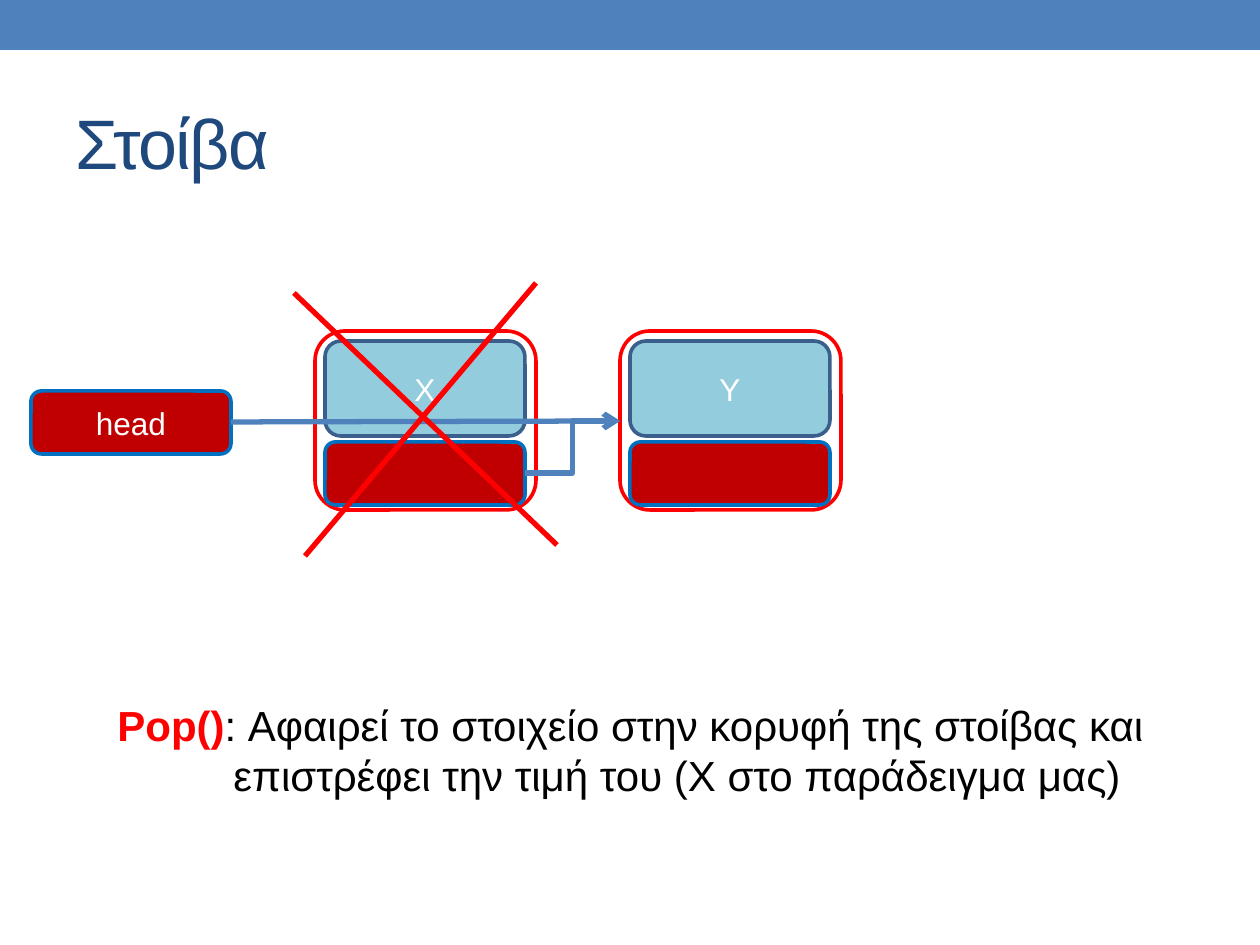
from lxml.etree import SubElement
from pptx import Presentation
from pptx.dml.color import RGBColor
from pptx.enum.shapes import MSO_CONNECTOR, MSO_SHAPE
from pptx.enum.text import MSO_ANCHOR, MSO_AUTO_SIZE, PP_ALIGN
from pptx.oxml.ns import qn
from pptx.util import Pt

EMU_PER_PX = 914400 / 126
FONT = "Arial"
BLUE = RGBColor(0x4F, 0x81, 0xBD)
NAVY = RGBColor(0x1F, 0x49, 0x7D)
RED = RGBColor(0xFF, 0x00, 0x00)
DARK_RED = RGBColor(0xC0, 0x00, 0x00)
BORDER_BLUE = RGBColor(0x00, 0x70, 0xC0)
LIGHT_BLUE = RGBColor(0x93, 0xCD, 0xDD)
SLATE = RGBColor(0x3A, 0x5F, 0x8C)
WHITE = RGBColor(0xFF, 0xFF, 0xFF)
BLACK = RGBColor(0x00, 0x00, 0x00)


def px(*lengths):
    return [round(length * EMU_PER_PX) for length in lengths]


def add_run(paragraph, text, size, color, bold=False):
    run = paragraph.add_run()
    run.text = text
    run.font.name = FONT
    run.font.size = Pt(size)
    run.font.color.rgb = color
    run.font.bold = bold
    return run


def add_box(shapes, box, fill=None, line=None, label="", kind=MSO_SHAPE.ROUNDED_RECTANGLE):
    shape = shapes.add_shape(kind, *px(*box))
    shape.shadow.inherit = False
    if fill is None:
        shape.fill.background()
    else:
        shape.fill.solid()
        shape.fill.fore_color.rgb = fill
    if line is None:
        shape.line.fill.background()
    else:
        shape.line.color.rgb = line
        shape.line.width = Pt(2.08)
    if label:
        shape.text_frame.vertical_anchor = MSO_ANCHOR.MIDDLE
        paragraph = shape.text_frame.paragraphs[0]
        paragraph.alignment = PP_ALIGN.CENTER
        add_run(paragraph, label, 18, WHITE)
    return shape


def add_line(shapes, start, end, color, kind=MSO_CONNECTOR.STRAIGHT, arrow=False):
    connector = shapes.add_connector(kind, *px(*start, *end))
    connector.line.color.rgb = color
    connector.line.width = Pt(3)
    if arrow:
        SubElement(connector.line._get_or_add_ln(), qn("a:tailEnd"), type="arrow")
    SubElement(connector._element.spPr, qn("a:effectLst"))


def add_title(slide, box, text):
    title = slide.shapes.title
    title.left, title.top, title.width, title.height = px(*box)
    title.text_frame.vertical_anchor = MSO_ANCHOR.MIDDLE
    paragraph = title.text_frame.paragraphs[0]
    paragraph.alignment = PP_ALIGN.LEFT
    run = add_run(paragraph, text, 40, NAVY)
    run.font._element.set("spc", "-100")


def add_node(slide, box, value):
    left, top, width, height = box
    shapes = slide.shapes.add_group_shape().shapes
    inner_left, inner_width = left + 10, width - 21
    add_box(shapes, box, line=RED)
    add_box(shapes, (inner_left, top + 111, inner_width, 63), DARK_RED, BORDER_BLUE)
    add_box(shapes, (inner_left, top + 10, inner_width, 95), LIGHT_BLUE, SLATE, value)


def add_cross(slide, box):
    left, top, width, height = box
    right, bottom = left + width, top + height
    add_line(slide.shapes, (right - 21, top), (left + 11, bottom), RED)
    add_line(slide.shapes, (left, top + 10), (right, bottom - 11), RED)


def add_stack(slide, box):
    left, top, width, height = box
    node_top = top + 48
    second_left = left + 589
    target = (second_left, top + 138)
    add_node(slide, (left + 284, node_top, 221, 179), "X")
    add_node(slide, (second_left, node_top, 221, 179), "Y")
    add_line(slide.shapes, (left + 494, top + 190), target, BLUE, MSO_CONNECTOR.ELBOW, True)
    add_box(slide.shapes, (left, top + 108, 200, 63), DARK_RED, BORDER_BLUE, "head")
    add_line(slide.shapes, (left + 200, top + 139), target, BLUE, arrow=True)
    add_cross(slide, (left + 263, top, 263, 273))


def add_explanation(slide, box):
    frame = slide.shapes.add_textbox(*px(*box)).text_frame
    frame.word_wrap = False
    frame.auto_size = MSO_AUTO_SIZE.SHAPE_TO_FIT_TEXT
    first = frame.paragraphs[0]
    add_run(first, "Pop()", 24, RED, True)
    add_run(first, ": Αφαιρεί το στοιχείο στην κορυφή της στοίβας και", 24, BLACK)
    second = frame.add_paragraph()
    second._p.get_or_add_pPr().set("marL", str(px(116)[0]))
    add_run(second, "επιστρέφει την τιμή του (Χ στο παράδειγμα μας)", 24, BLACK)


def main():
    presentation = Presentation()
    presentation.slide_width, presentation.slide_height = px(1260, 945)
    slide = presentation.slides.add_slide(presentation.slide_layouts[5])
    add_box(slide.shapes, (0, 0, 1260, 50), BLUE, kind=MSO_SHAPE.RECTANGLE)
    add_title(slide, (63, 73, 1134, 136), "Στοίβα")
    add_stack(slide, (31, 283, 810, 273))
    add_explanation(slide, (105, 693, 1075, 115))
    presentation.save("out.pptx")


if __name__ == "__main__":
    main()
